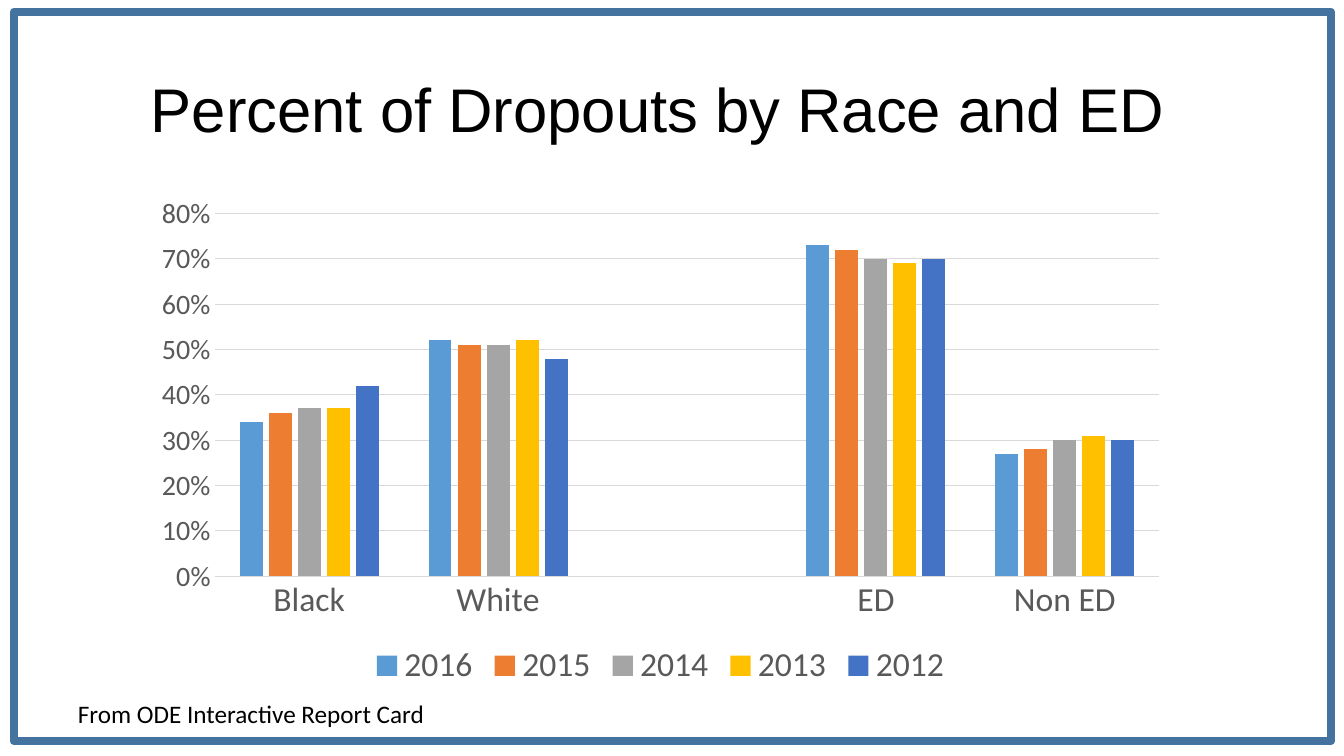
"""Build a slide with a clustered column chart of dropouts by race and ED."""
from pptx import Presentation
from pptx.chart.data import CategoryChartData
from pptx.dml.color import RGBColor
from pptx.enum.chart import XL_CHART_TYPE as CHART, XL_LEGEND_POSITION as LEGEND, XL_TICK_MARK as TICK
from pptx.enum.shapes import MSO_SHAPE as SHAPE
from pptx.enum.text import MSO_ANCHOR as ANCHOR, MSO_AUTO_SIZE as AUTO
from pptx.util import Emu, Pt

COLORS = {
    "frame": "43739E", "text": "000000", "label": "595959", "grid": "D9D9D9",
    "2016": "5B9BD5", "2015": "ED7D31", "2014": "A5A5A5", "2013": "FFC000", "2012": "4472C4",
}
CATEGORIES = ["Black", "White", "", "ED", "Non ED"]
DROPOUTS = {
    "2016": [0.34, 0.52, None, 0.73, 0.27],
    "2015": [0.36, 0.51, None, 0.72, 0.28],
    "2014": [0.37, 0.51, None, 0.70, 0.30],
    "2013": [0.37, 0.52, None, 0.69, 0.31],
    "2012": [0.42, 0.48, None, 0.70, 0.30],
}


def set_all(obj, values):
    for name, value in values.items():
        setattr(obj, name, value)


class Deck:
    SCALE = 914400 / 100.8

    def __init__(self, width, height):
        self.prs = Presentation()
        self.prs.slide_width, self.prs.slide_height = self.emu(width, height)
        self.s = self.prs.slides.add_slide(self.prs.slide_layouts[6])

    def emu(self, *lengths):
        return [Emu(round(n * self.SCALE)) for n in lengths]

    def color(self, name):
        return RGBColor.from_string(COLORS[name])

    def font(self, font, size, color, name="Calibri"):
        set_all(font, {"size": Pt(size), "name": name, "bold": False})
        font.color.rgb = self.color(color)

    def line(self, line, color, width):
        line.color.rgb = self.color(color)
        line.width = Pt(width)

    def frame(self, box, color, width):
        sp = self.s.shapes.add_shape(SHAPE.RECTANGLE, *self.emu(*box))
        sp.shadow.inherit = False
        sp.fill.background()
        self.line(sp.line, color, width)

    def text(self, box, text, size, name="Calibri", spacing=1.0, **fmt):
        tf = self.s.shapes.add_textbox(*self.emu(*box)).text_frame
        set_all(tf, fmt)
        p = tf.paragraphs[0]
        p.line_spacing = spacing
        r = p.add_run()
        r.text = text
        self.font(r.font, size, "text", name)

    def columns(self, box, categories, series):
        data = CategoryChartData(number_format="0%")
        data.categories = categories
        for name, values in series.items():
            data.add_series(name, values)
        chart = self.s.shapes.add_chart(CHART.COLUMN_CLUSTERED, *self.emu(*box), data).chart
        set_all(chart, {"has_title": False, "has_legend": True})
        self.font(chart.font, 10, "text")
        set_all(chart.legend, {"position": LEGEND.BOTTOM, "include_in_layout": False})
        self.font(chart.legend.font, 24, "label")

        plot = chart.plots[0]
        set_all(plot, {"gap_width": 219, "overlap": -27, "vary_by_categories": False})
        for ser in plot.series:
            ser.format.fill.solid()
            ser.format.fill.fore_color.rgb = self.color(ser.name)

        cat, val = chart.category_axis, chart.value_axis
        for axis, size in ((cat, 24), (val, 20)):
            set_all(axis, {"major_tick_mark": TICK.NONE, "minor_tick_mark": TICK.NONE})
            self.font(axis.tick_labels.font, size, "label")
        self.line(cat.format.line, "grid", 0.75)
        set_all(val, {"minimum_scale": 0, "maximum_scale": 0.8, "major_unit": 0.1,
                      "has_major_gridlines": True})
        set_all(val.tick_labels, {"number_format": "0%", "number_format_is_linked": False})
        val.format.line.fill.background()
        self.line(val.major_gridlines.format.line, "grid", 0.75)


def main():
    deck = Deck(1344, 756)
    deck.frame((14, 12, 1317, 729), "frame", 6)
    deck.text((141, 40, 1039, 146), "Percent of Dropouts by Race and ED", 44, "Arial", 0.9,
              word_wrap=True, vertical_anchor=ANCHOR.MIDDLE)
    deck.columns((141, 186, 1039, 507), CATEGORIES, DROPOUTS)
    deck.text((68, 693, 370, 40), "From ODE Interactive Report Card", 18,
              word_wrap=False, auto_size=AUTO.SHAPE_TO_FIT_TEXT)
    deck.prs.save("out.pptx")


if __name__ == "__main__":
    main()
